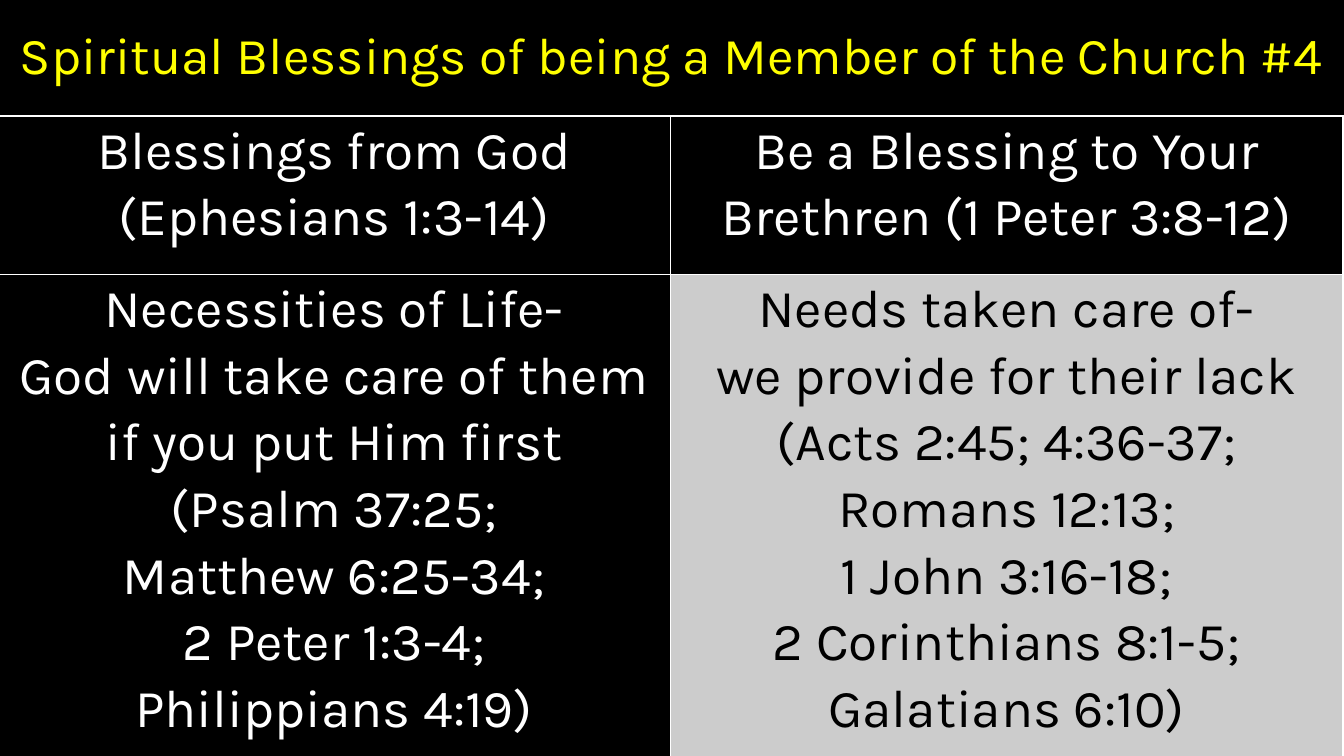
import pptx
import pptx.util
import pptx.dml.color
import pptx.enum.text
import pptx.oxml
import pptx.oxml.ns
from dataclasses import dataclass

Inches = pptx.util.Inches
Pt = pptx.util.Pt
CENTER = pptx.enum.text.PP_ALIGN.CENTER
MIDDLE = pptx.enum.text.MSO_ANCHOR.MIDDLE
TOP = pptx.enum.text.MSO_ANCHOR.TOP


@dataclass(frozen=True)
class Theme:
    font: str = "Karla"
    black: str = "000000"
    white: str = "FFFFFF"
    yellow: str = "FFFF00"
    gray: str = "CCCCCC"
    title: float = 36.9
    body: float = 38


TITLE = "Spiritual Blessings of being a Member of the Church #4"
GOD_HEAD = ["Blessings from God", "(Ephesians 1:3-14)"]
KIN_HEAD = ["Be a Blessing to Your Brethren (1 Peter 3:8-12)"]
GOD_LIST = [
    "Necessities of Life-",
    "God will take care of them",
    "if you put Him first",
    "(Psalm 37:25;",
    "Matthew 6:25-34;",
    "2 Peter 1:3-4;",
    "Philippians 4:19)",
]
KIN_LIST = [
    "Needs taken care of-",
    "we provide for their lack",
    "(Acts 2:45; 4:36-37;",
    "Romans 12:13;",
    "1 John 3:16-18;",
    "2 Corinthians 8:1-5;",
    "Galatians 6:10)",
]


def color(code):
    return pptx.dml.color.RGBColor.from_string(code)


def assign(item, values):
    for name, value in values.items():
        setattr(item, name, value)


class Board:
    def __init__(self, deck, theme):
        self.theme = theme
        self.slide = deck.slides.add_slide(deck.slide_layouts[6])
        back = self.slide.background.fill
        back.solid()
        back.fore_color.rgb = color(theme.black)

    def letter(self, frame, lines, size, ink, space):
        """Fill a text frame with one centered paragraph per line."""
        for index, line in enumerate(lines):
            para = frame.paragraphs[0] if index == 0 else frame.add_paragraph()
            assign(para, {"alignment": CENTER, "line_spacing": space})
            run = para.add_run()
            run.text = line
            assign(run.font, {"name": self.theme.font, "size": Pt(size), "bold": False})
            run.font.color.rgb = color(ink)

    def title(self, text, left, top, width, height):
        box = self.slide.shapes.add_textbox(
            Inches(left), Inches(top), Inches(width), Inches(height))
        assign(box.text_frame, {
            "word_wrap": True, "vertical_anchor": MIDDLE,
            "margin_left": Inches(0.05), "margin_right": Inches(0.05),
        })
        self.letter(box.text_frame, [text], self.theme.title, self.theme.yellow, 0.9)

    def border(self, cell, widths):
        """Draw solid cell edges; widths maps L, R, T and B to points."""
        props = cell._tc.get_or_add_tcPr()
        for side, width in widths.items():
            props.append(pptx.oxml.parse_xml(
                f'<a:ln{side} {pptx.oxml.ns.nsdecls("a")} w="{Pt(width)}">'
                f'<a:solidFill><a:srgbClr val="{self.theme.white}"/></a:solidFill>'
                f'</a:ln{side}>'))

    def table(self, rows, left, top, widths, heights):
        """Each cell in rows is a tuple of lines, fill and text color."""
        grid = self.slide.shapes.add_table(
            len(rows), len(widths), Inches(left), Inches(top),
            Inches(sum(widths)), Inches(sum(heights))).table
        assign(grid, {"first_row": False, "horz_banding": False})
        for column, width in zip(grid.columns, widths):
            column.width = Inches(width)
        for row, height, cells in zip(grid.rows, heights, rows):
            row.height = Inches(height)
            for cell, (lines, fill, ink) in zip(row.cells, cells):
                assign(cell, {
                    "margin_left": Inches(0.07), "margin_right": Inches(0.07),
                    "margin_top": 0, "margin_bottom": 0, "vertical_anchor": TOP,
                })
                self.border(cell, {"L": 1, "R": 1, "T": 1, "B": 1})
                cell.fill.solid()
                cell.fill.fore_color.rgb = color(fill)
                self.letter(cell.text_frame, lines, self.theme.body, ink, 1.07)


def main():
    deck = pptx.Presentation()
    assign(deck, {"slide_width": Inches(13.33), "slide_height": Inches(7.5)})
    theme = Theme()
    board = Board(deck, theme)
    board.title(TITLE, 0, 0, 13.33, 1.15)
    dark = (theme.black, theme.white)
    light = (theme.gray, theme.black)
    board.table([
        [(GOD_HEAD, *dark), (KIN_HEAD, *dark)],
        [(GOD_LIST, *dark), (KIN_LIST, *light)],
    ], -0.02, 1.15, [6.67, 6.67], [1.57, 4.8])
    deck.save("out.pptx")


if __name__ == "__main__":
    main()
